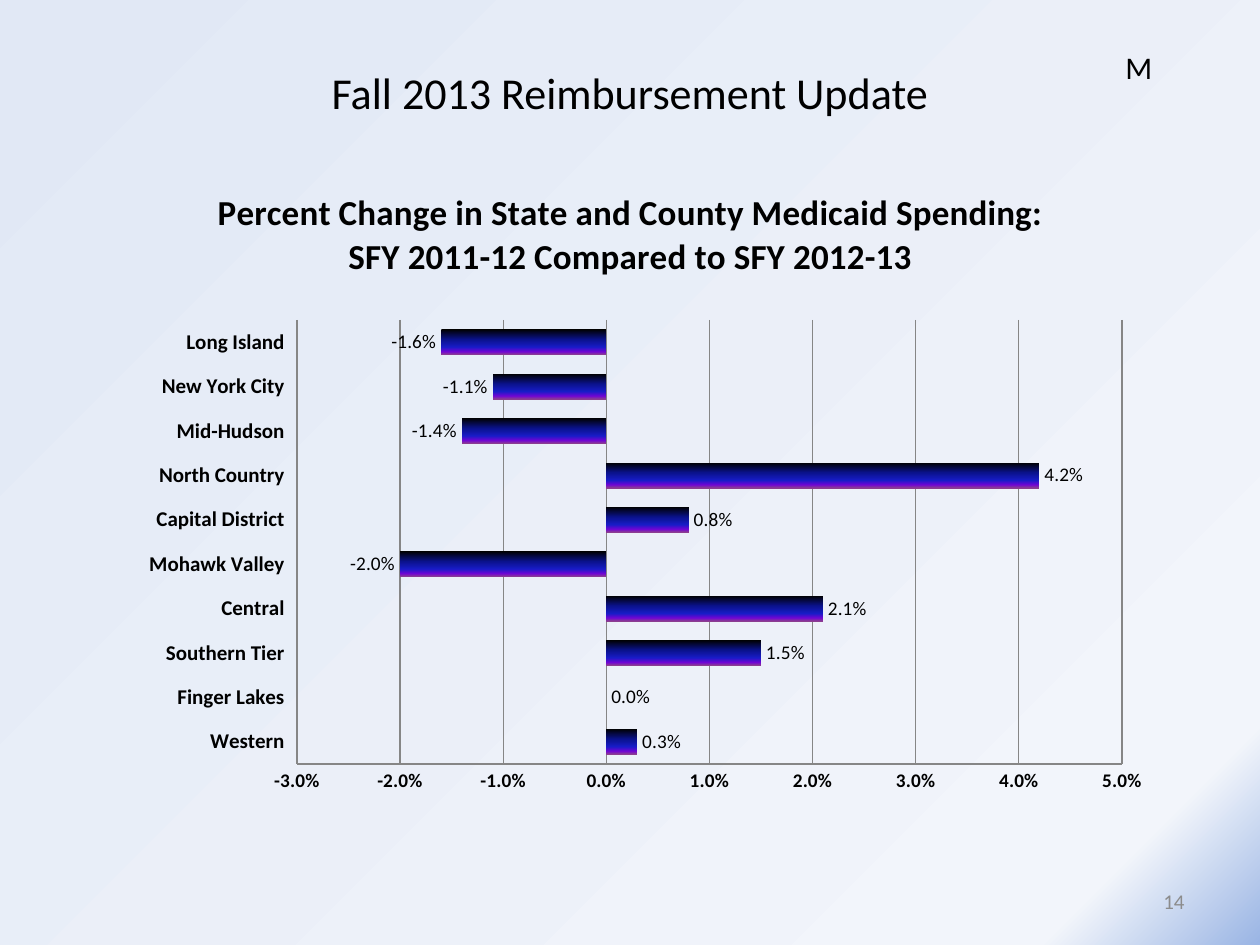
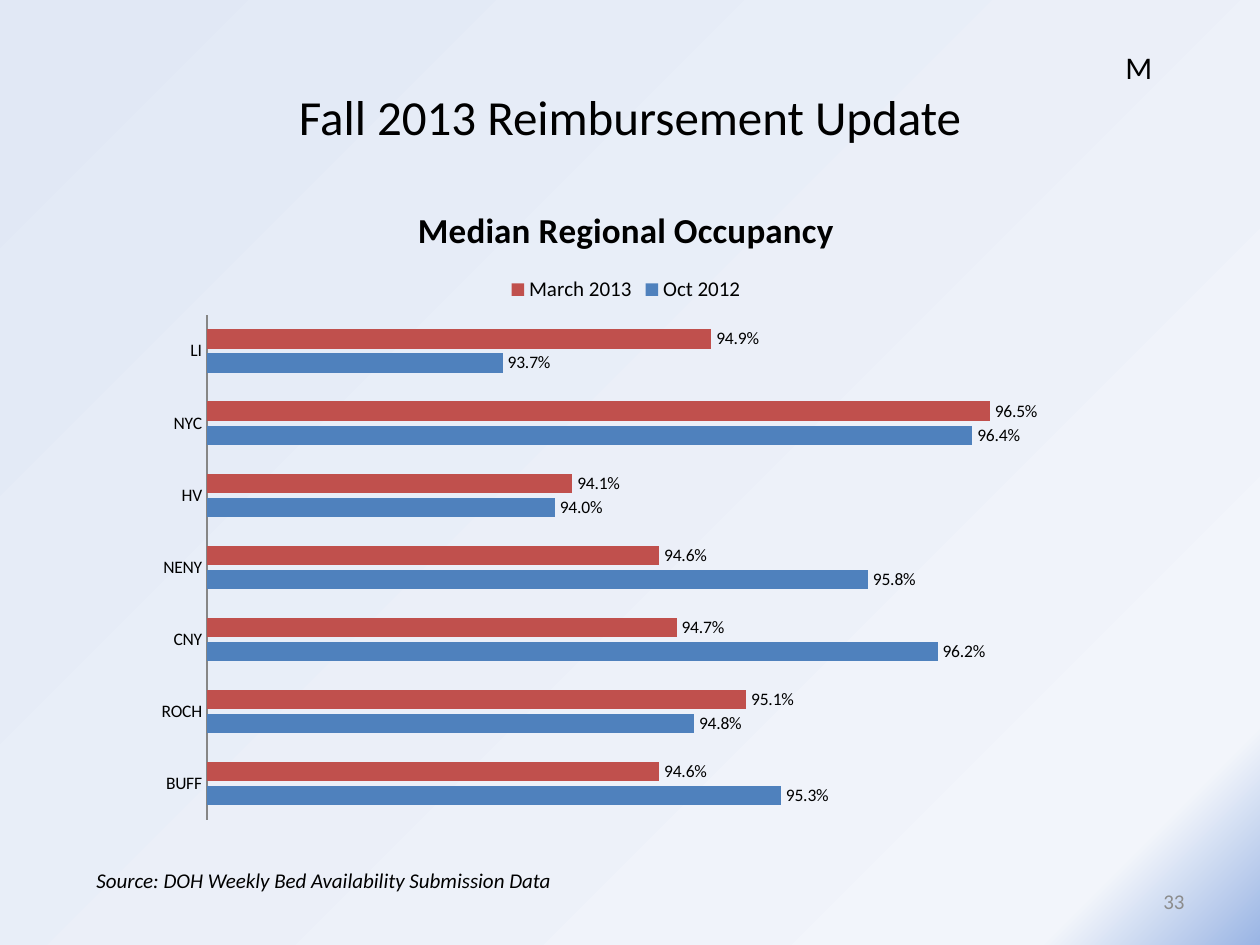
import lxml.etree
import pptx
import pptx.chart.data
import pptx.dml.color
import pptx.enum.chart
import pptx.enum.text
import pptx.oxml
import pptx.oxml.ns
import pptx.util

PX = 914400 / 126
FONT = "Calibri"
INK, GREY, RULE = "000000", "8C8C8C", "868686"
NS = pptx.oxml.ns.nsdecls("a", "c")
ALIGN = pptx.enum.text.PP_ALIGN
ANCHOR = pptx.enum.text.MSO_ANCHOR
XL = pptx.enum.chart

# What each slide holds; boxes are left, top, width, height in px
SLIDES = [
    dict(
        page="14", size=25.2, anchor=ANCHOR.TOP, note=None,
        head="Percent Change in State and County Medicaid Spending:\n"
             "SFY 2011-12 Compared to SFY 2012-13",
        box=(100, 165, 1061, 685), plot=(297, 320, 825, 444),
        cats=["Western", "Finger Lakes", "Southern Tier", "Central",
              "Mohawk Valley", "Capital District", "North Country",
              "Mid-Hudson", "New York City", "Long Island"],
        rows=[("Series 1", INK,
               [0.3, 0, 1.5, 2.1, -2.0, 0.8, 4.2, -1.4, -1.1, -1.6])],
        gap=75, lap=40, low=-3, high=5, label=11, tick=12, bold=True,
        scale=True, legend=False),
    dict(
        page="33", size=28, anchor=ANCHOR.MIDDLE,
        note="Source: DOH Weekly Bed Availability Submission Data",
        head="Median Regional Occupancy",
        box=(147, 179, 958, 649), plot=(207, 315, 870, 505),
        cats=["BUFF", "ROCH", "CNY", "NENY", "HV", "NYC", "LI"],
        rows=[("Oct 2012", "4F81BD",
               [95.3, 94.8, 96.2, 95.8, 94.0, 96.4, 93.7]),
              ("March 2013", "C0504D",
               [94.6, 95.1, 94.7, 94.6, 94.1, 96.5, 94.9])],
        gap=150, lap=-25, low=92, high=97, label=10, tick=10, bold=False,
        scale=False, legend=True),
]


def write(frame, text, size=12, color=INK, bold=False, italic=False, align=None):
    frame.text = text
    for para in frame.paragraphs:
        para.alignment = align
        for run in para.runs:
            font = run.font
            font.name, font.size = FONT, pptx.util.Pt(size)
            font.bold, font.italic = bold, italic
            font.color.rgb = pptx.dml.color.RGBColor.from_string(color)


def blend(stops, shape):
    marks = ""
    for place, color, alpha in stops:
        marks += (f'<a:gs pos="{place * 1000}"><a:srgbClr val="{color}">'
                  f'<a:alpha val="{alpha * 1000}"/></a:srgbClr></a:gs>')
    return pptx.oxml.parse_xml(
        f'<a:gradFill {NS} rotWithShape="1"><a:gsLst>{marks}</a:gsLst>'
        f'{shape}</a:gradFill>')


deck = pptx.Presentation()
deck.slide_width, deck.slide_height = int(1260 * PX), int(945 * PX)

# Shared background, glowing from the bottom right corner
master = deck.slide_master
master.background.fill.solid()
plain = master.element.xpath(".//p:bgPr/a:solidFill")[0]
plain.getparent().replace(plain, blend(
    [(0, "9AB5E4", 100), (10, "F2F5FB", 32), (100, "E1E8F5", 100)],
    '<a:path path="circle"><a:fillToRect l="100000" t="100000"/></a:path>'))

for item in SLIDES:
    slide = deck.slides.add_slide(deck.slide_layouts[5])

    # Title
    title = slide.shapes.title
    title.left, title.top, title.width, title.height = (
        int(n * PX) for n in (95, 63, 1070, 105))
    frame = title.text_frame
    frame.auto_size = pptx.enum.text.MSO_AUTO_SIZE.NONE
    frame.vertical_anchor = item["anchor"]
    frame.margin_top = frame.margin_bottom = int(2 * PX)
    write(frame, "Fall 2013 Reimbursement Update", size=item["size"],
          align=ALIGN.CENTER)

    # Chart
    data = pptx.chart.data.CategoryChartData(number_format="0.0%")
    data.categories = item["cats"]
    for name, color, vals in item["rows"]:
        data.add_series(name, [round(v / 100, 3) for v in vals])
    chart = slide.shapes.add_chart(
        XL.XL_CHART_TYPE.BAR_CLUSTERED,
        *(int(n * PX) for n in item["box"]), data).chart
    chart.font.name, chart.font.size = FONT, pptx.util.Pt(10)
    chart.font.color.rgb = pptx.dml.color.RGBColor.from_string(INK)
    chart.has_title = True
    write(chart.chart_title.text_frame, item["head"], size=20, bold=True,
          align=ALIGN.CENTER)
    chart.has_legend = item["legend"]
    if item["legend"]:
        chart.legend.position = XL.XL_LEGEND_POSITION.TOP
        chart.legend.include_in_layout = False
        chart.legend.font.size = pptx.util.Pt(12)

    # Bars and their labels
    bars = chart.plots[0]
    bars.vary_by_categories = False
    bars.gap_width, bars.overlap = item["gap"], item["lap"]
    for row, (name, color, vals) in zip(bars.series, item["rows"]):
        row.format.fill.solid()
        row.format.fill.fore_color.rgb = pptx.dml.color.RGBColor.from_string(color)
        row.invert_if_negative = False
        tags = row.data_labels
        tags.show_value = True
        tags.position = XL.XL_LABEL_POSITION.OUTSIDE_END
        tags.number_format, tags.number_format_is_linked = "0.0%", False
        tags.font.size = pptx.util.Pt(item["label"])

    # Axes
    side, base = chart.category_axis, chart.value_axis
    for axis in (side, base):
        axis.major_tick_mark = axis.minor_tick_mark = XL.XL_TICK_MARK.NONE
        axis.format.line.color.rgb = pptx.dml.color.RGBColor.from_string(RULE)
        axis.tick_labels.font.bold = item["bold"]
    side.tick_labels.font.size = pptx.util.Pt(item["tick"])
    base.tick_labels.font.size = pptx.util.Pt(11)
    base.tick_labels.number_format = "0.0%"
    base.tick_labels.number_format_is_linked = False
    base.minimum_scale, base.maximum_scale = item["low"] / 100, item["high"] / 100
    base.major_unit = 0.01
    base.visible = base.has_major_gridlines = item["scale"]
    if item["scale"]:
        side.tick_label_position = XL.XL_TICK_LABEL_POSITION.LOW
        lines = base.major_gridlines.format.line
        lines.color.rgb = pptx.dml.color.RGBColor.from_string(RULE)
        # Shaded bars
        for plain in chart.element.xpath(".//c:ser/c:spPr/a:solidFill"):
            plain.getparent().replace(plain, blend(
                [(0, "000000", 100), (40, "0A128C", 100), (70, "181CC7", 100),
                 (88, "7005D4", 100), (100, "8C3D91", 100)],
                '<a:lin ang="5400000" scaled="0"/>'))

    # Plot place within the chart, and clear chart ground
    left, top, wide, high = item["box"]
    x, y, w, h = item["plot"]
    parts = dict(x=(x - left) / wide, y=(y - top) / high, w=w / wide, h=h / high)
    spots = "".join(f'<c:{k} val="{v:.4f}"/>' for k, v in parts.items())
    area = chart.element.xpath(".//c:plotArea")[0]
    for old in area.xpath("./c:layout"):
        area.remove(old)
    area.insert(0, pptx.oxml.parse_xml(
        f'<c:layout {NS}><c:manualLayout><c:layoutTarget val="inner"/>'
        f'<c:xMode val="edge"/><c:yMode val="edge"/>{spots}'
        f'</c:manualLayout></c:layout>'))
    clear = (f'<c:spPr {NS}><a:noFill/><a:ln><a:noFill/></a:ln></c:spPr>')
    area.append(pptx.oxml.parse_xml(clear))
    chart.element.xpath("./c:chart")[0].addnext(pptx.oxml.parse_xml(clear))

    # Corner mark, page number and source note
    notes = [
        ("M", (1113, 42, 42, 50), ANCHOR.TOP, dict(size=18)),
        (item["page"], (903, 876, 294, 50), ANCHOR.MIDDLE,
         dict(color=GREY, align=ALIGN.RIGHT)),
    ]
    if item["note"]:
        notes.append((item["note"], (84, 861, 851, 38), ANCHOR.TOP,
                      dict(italic=True)))
    for text, box, anchor, style in notes:
        frame = slide.shapes.add_textbox(*(int(n * PX) for n in box)).text_frame
        frame.word_wrap = True
        frame.vertical_anchor = anchor
        write(frame, text, **style)

deck.save("out.pptx")
